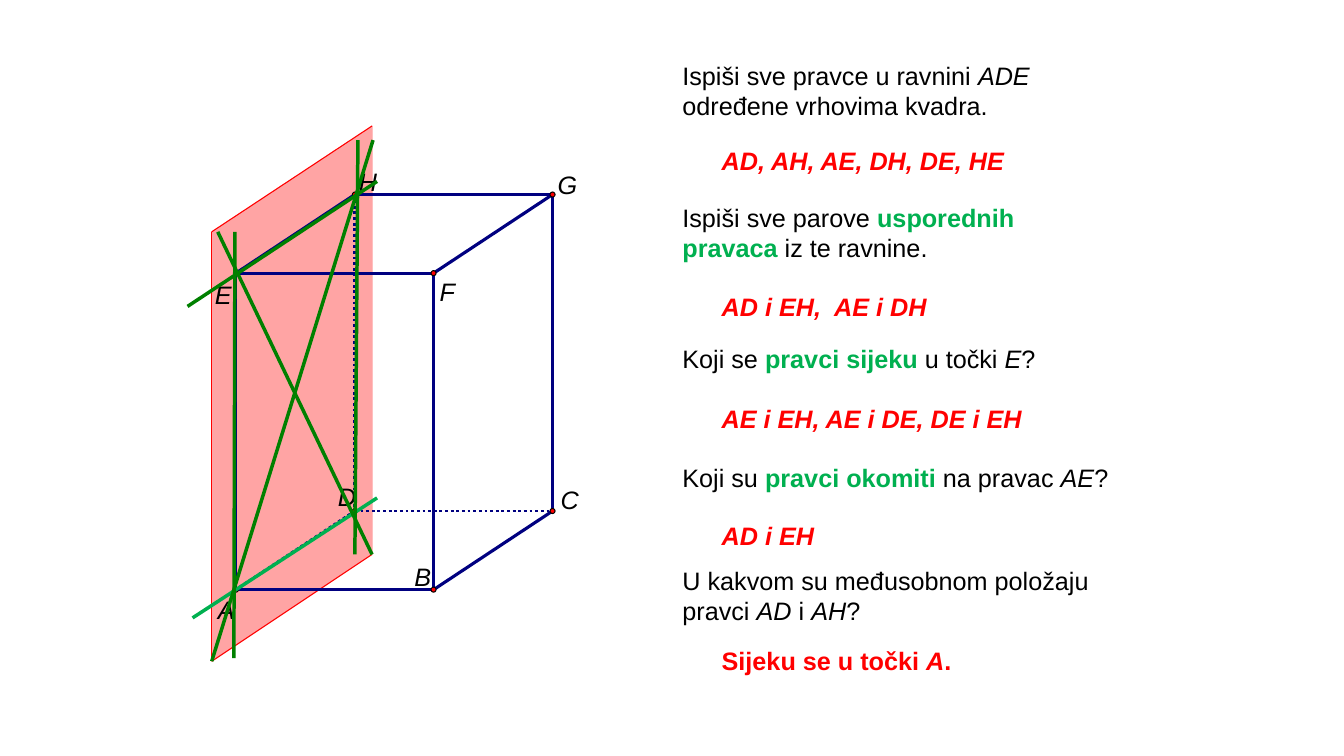
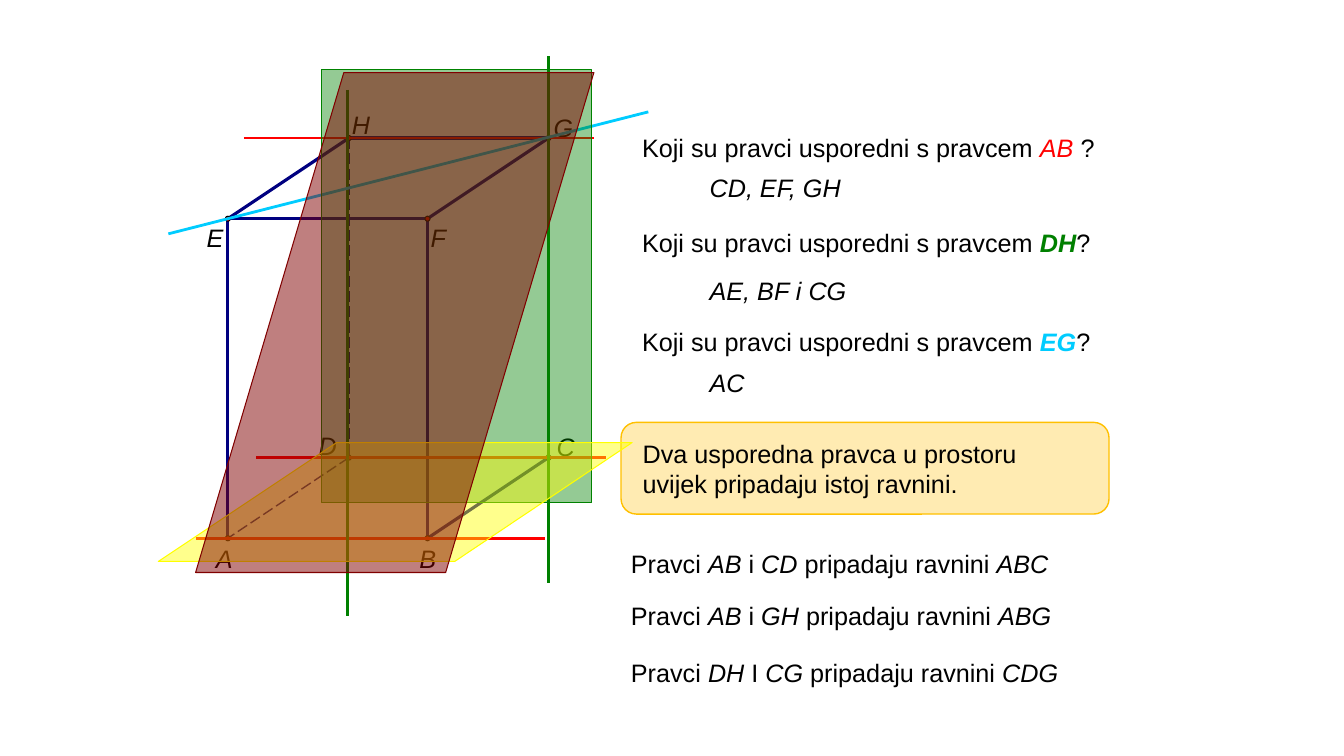
"""Builds two geometry slides about lines and planes in a cuboid."""
from lxml.etree import SubElement
from pptx import Presentation
from pptx.dml.color import RGBColor
from pptx.enum.dml import MSO_LINE
from pptx.enum.shapes import MSO_CONNECTOR, MSO_SHAPE
from pptx.enum.text import MSO_ANCHOR, MSO_AUTO_SIZE, PP_ALIGN
from pptx.oxml.ns import qn
from pptx.util import Inches, Pt

COLORS = {
    "text": "000000", "edge": "000080", "red": "FF0000", "green": "008000",
    "accent": "00B050", "cyan": "00CCFF", "pink": "FFA4A4", "amber": "FFC000",
    "plane_green": "008200", "yellow": "FFFF00", "maroon": "800000",
}
FONT = "Arial"
DOT = 0.05
ITALIC = {"italic": True}
KEY = {"color": "accent", "bold": True}
ANSWER = {"color": "red", "bold": True}
VISIBLE_EDGES = "AB EF BF CB GF GC HG AE HE".split()
HIDDEN_EDGES = "DC DA HD".split()


def rgb(name):
    return RGBColor.from_string(COLORS[name])


def add_run(p, text, size=18, color="text", bold=False, italic=False):
    r = p.add_run()
    r.text = text
    r.font.name = FONT
    r.font.size = Pt(size)
    r.font.bold = bold
    r.font.italic = italic
    r.font.color.rgb = rgb(color)


def write(tf, runs, **fmt):
    p = tf.paragraphs[0]
    p.alignment = PP_ALIGN.LEFT
    for run in runs:
        text, extra = (run, {}) if isinstance(run, str) else run
        add_run(p, text, **{**fmt, **extra})


def set_margins(tf, left, right, vertical):
    tf.margin_left, tf.margin_right = Inches(left), Inches(right)
    tf.margin_top = tf.margin_bottom = Inches(vertical)


def add_text(s, x, y, w, *runs, h=0.4, **fmt):
    sp = s.shapes.add_textbox(Inches(x), Inches(y), Inches(w), Inches(h))
    tf = sp.text_frame
    tf.word_wrap = True
    tf.auto_size = MSO_AUTO_SIZE.SHAPE_TO_FIT_TEXT
    write(tf, runs, **fmt)
    return tf


def add_label(s, text, x, y):
    tf = add_text(s, x, y, 0.18, text, h=0.3, italic=True)
    tf.word_wrap = False
    set_margins(tf, 0, 0, 0)


def add_line(s, start, end, color, width, dash=None):
    cn = s.shapes.add_connector(
        MSO_CONNECTOR.STRAIGHT, *(Inches(v) for v in (*start, *end)))
    cn.line.color.rgb = rgb(color)
    cn.line.width = Pt(width)
    if dash is not None:
        cn.line.dash_style = dash
    SubElement(cn.element.spPr, qn("a:effectLst"))


def paint(sp, fill, line, width=0, opacity=100):
    sp.shadow.inherit = False
    sp.fill.solid()
    sp.fill.fore_color.rgb = rgb(fill)
    sp.line.color.rgb = rgb(line)
    sp.line.width = Pt(width)
    if opacity < 100:
        clr = sp.element.spPr.find(qn("a:solidFill")).find(qn("a:srgbClr"))
        SubElement(clr, qn("a:alpha")).set("val", str(opacity * 1000))


def add_shape(s, kind, x, y, w, h, fill, line, **look):
    sp = s.shapes.add_shape(kind, Inches(x), Inches(y), Inches(w), Inches(h))
    paint(sp, fill, line, **look)
    return sp


def add_plane(s, points, color, opacity=100):
    corners = [(Inches(x), Inches(y)) for x, y in points]
    fb = s.shapes.build_freeform(*corners[0])
    fb.add_line_segments(corners[1:], close=True)
    paint(fb.convert_to_shape(), color, color, opacity=opacity)


def add_cuboid(s, origin, width, depth, height, labels, dash, dash_width):
    x, y = origin
    dx, dy = depth
    base = {"A": (x, y), "B": (x + width, y),
            "C": (x + width + dx, y - dy), "D": (x + dx, y - dy)}
    top = {t: (base[b][0], base[b][1] - height) for b, t in zip("ABCD", "EFGH")}
    points = {**base, **top}
    for a, b in VISIBLE_EDGES:
        add_line(s, points[a], points[b], "edge", 2.25)
    for a, b in HIDDEN_EDGES:
        add_line(s, points[a], points[b], "edge", dash_width, dash)
    for name, (px, py) in points.items():
        add_shape(s, MSO_SHAPE.OVAL, px - DOT / 2, py - DOT / 2, DOT, DOT,
                  "red", "text")
        add_label(s, name, *labels[name])


def build_plane_slide(prs):
    s = prs.slides.add_slide(prs.slide_layouts[6])
    plane = [(2.1, 6.56), (3.69, 5.5), (3.69, 1.25), (2.1, 2.3)]
    add_plane(s, plane, "pink")
    bottom_left, bottom_right, top_right, top_left = plane
    for start, end in ((top_left, bottom_left), (top_right, top_left),
                       (bottom_right, bottom_left)):
        add_line(s, start, end, "red", 0.75)
    labels = {"A": (2.16, 5.9), "B": (4.11, 5.57), "C": (5.56, 4.81),
              "D": (3.35, 4.78), "E": (2.13, 2.77), "F": (4.36, 2.74),
              "G": (5.53, 1.68), "H": (3.56, 1.65)}
    add_cuboid(s, (2.34, 5.85), 1.96, (1.18, 0.78), 3.14, labels,
               MSO_LINE.ROUND_DOT, 0)

    questions = [
        (0.55, 4.33, ["Ispiši sve pravce u ravnini ", ("ADE ", ITALIC),
                      "određene vrhovima kvadra."]),
        (1.96, 4.33, ["Ispiši sve parove ", ("usporednih pravaca ", KEY),
                      "iz te ravnine."]),
        (3.36, 4.73, ["Koji se ", ("pravci sijeku ", KEY), "u točki ",
                      ("E", ITALIC), "?"]),
        (4.54, 4.73, ["Koji su ", ("pravci okomiti ", KEY), "na pravac ",
                      ("AE", ITALIC), "?"]),
        (5.56, 4.33, ["U kakvom su međusobnom položaju pravci ",
                      ("AD", ITALIC), " i ", ("AH", ITALIC), "?"]),
    ]
    for y, w, runs in questions:
        add_text(s, 6.67, y, w, *runs)
    answers = [
        (1.39, [("AD, AH, AE, DH, DE, HE", ITALIC)]),
        (2.84, [("AD i EH,  AE i DH", ITALIC)]),
        (3.95, [("AE i EH, AE i DE, DE i EH", ITALIC)]),
        (5.11, [("AD i EH", ITALIC)]),
        (6.35, ["Sijeku se u točki ", ("A", ITALIC), "."]),
    ]
    for y, runs in answers:
        add_text(s, 7.06, y, 3.94, *runs, **ANSWER)

    add_line(s, (1.91, 6.13), (3.74, 4.94), "accent", 2.5)
    for start, end in (((2.1, 6.56), (3.7, 1.39)), ((2.32, 6.53), (2.33, 2.3)),
                       ((3.52, 5.5), (3.55, 1.39)), ((3.69, 5.5), (2.16, 2.3)),
                       ((3.74, 1.8), (1.86, 3.04))):
        add_line(s, start, end, "green", 2.5)


def build_parallel_slide(prs):
    s = prs.slides.add_slide(prs.slide_layouts[6])
    note = add_shape(s, MSO_SHAPE.ROUNDED_RECTANGLE, 6.16, 4.19, 4.84, 0.91,
                     "amber", "amber", width=1, opacity=30)
    tf = note.text_frame
    tf.word_wrap = True
    tf.vertical_anchor = MSO_ANCHOR.MIDDLE
    set_margins(tf, 0.17, 0.22, 0)
    write(tf, ["Dva usporedna pravca u prostoru uvijek pripadaju istoj ravnini."])
    labels = {"A": (2.14, 5.39), "B": (4.16, 5.39), "C": (5.52, 4.28),
              "D": (3.16, 4.27), "E": (2.05, 2.21), "F": (4.27, 2.21),
              "G": (5.49, 1.11), "H": (3.49, 1.08)}
    add_cuboid(s, (2.26, 5.34), 1.98, (1.2, 0.8), 3.17, labels,
               MSO_LINE.LONG_DASH, 1)

    for y, line, look, end, answer_y, answer in (
            (1.26, "AB", {"color": "red"}, " ?", 1.66, "CD, EF, GH"),
            (2.21, "DH", {"color": "green", "bold": True}, "?", 2.68,
             "AE, BF i CG"),
            (3.19, "EG", {"color": "cyan", "bold": True}, "?", 3.59, "AC")):
        add_text(s, 6.27, y, 4.73, "Koji su pravci usporedni s pravcem ",
                 (line, {**look, **ITALIC}), end)
        add_text(s, 6.94, answer_y, 1.97, answer, italic=True)
    for y, first, joint, second, plane in (
            (5.39, "AB", " i ", "CD", "ABC"),
            (5.91, "AB", " i ", "GH", "ABG"),
            (6.47, "DH", " I ", "CG", "CDG")):
        add_text(s, 6.16, y, 4.44, "Pravci ", (first, ITALIC), joint,
                 (second, ITALIC), " pripadaju ravnini ", (plane, ITALIC))

    for x, y in ((1.94, 5.34), (2.54, 4.54), (2.42, 1.37)):
        add_line(s, (x, y), (x + 3.47, y), "red", 2)
    for x, y in ((3.45, 0.89), (5.44, 0.56)):
        add_line(s, (x, y), (x, y + 5.22), "green", 2)
    add_line(s, (1.67, 2.32), (6.43, 1.11), "cyan", 2)

    add_shape(s, MSO_SHAPE.RECTANGLE, 3.19, 0.69, 2.68, 4.3,
              "plane_green", "plane_green", opacity=42)
    add_plane(s, [(1.57, 5.57), (4.51, 5.57), (6.27, 4.39), (3.34, 4.39)],
              "yellow", opacity=45)
    add_plane(s, [(1.94, 5.68), (4.42, 5.68), (5.89, 0.72), (3.41, 0.72)],
              "maroon", opacity=50)


def main():
    prs = Presentation()
    prs.slide_width, prs.slide_height = Inches(13.33), Inches(7.5)
    build_plane_slide(prs)
    build_parallel_slide(prs)
    prs.save("out.pptx")


if __name__ == "__main__":
    main()
